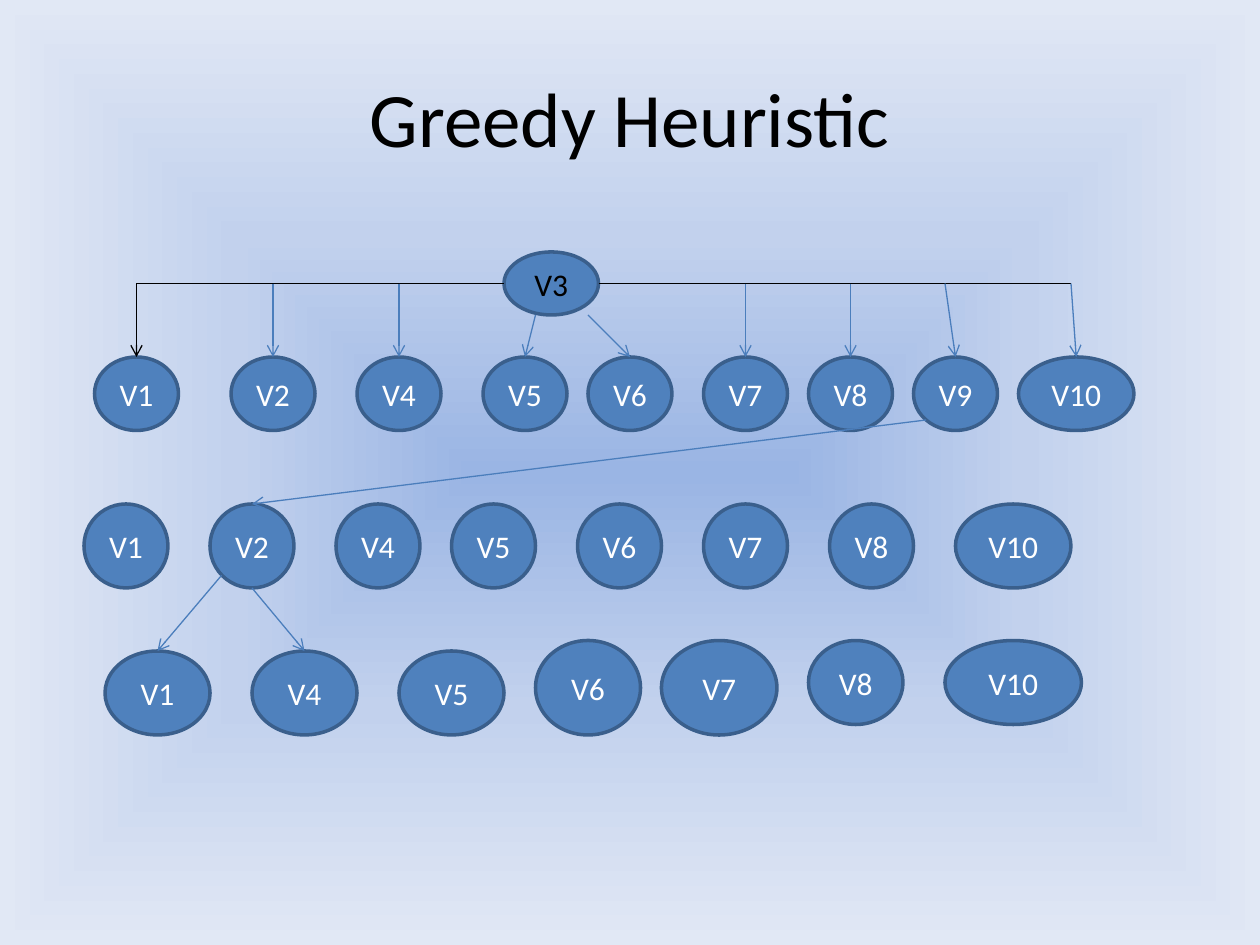
"""Build the Greedy Heuristic slide: three levels of vertices joined by arrows."""
from lxml.etree import SubElement
from pptx import Presentation
from pptx.dml.color import RGBColor
from pptx.enum.shapes import MSO_CONNECTOR, MSO_SHAPE
from pptx.enum.text import MSO_ANCHOR, PP_ALIGN
from pptx.oxml.ns import qn
from pptx.util import Pt

SCALE = 7620
FONT = "Calibri"
BLACK, WHITE = "000000", "FFFFFF"
OVAL_FILL, OVAL_LINE, ARROW_BLUE = "4F81BD", "3A5F8C", "4B7EBC"
BACKGROUND_STOPS = [(0, "9AB5E4"), (50, "C2D1ED"), (100, "E1E8F5")]

TITLE = ("Greedy Heuristic", (60, 36, 1080, 150))
ROOT = ("V3", (480, 240, 90, 60))
BUS_Y = 270
BUS_LINES = [(130, 480), (570, 1020)]

FIRST_LEFTS = {"V1": 90, "V2": 220, "V4": 340, "V5": 460, "V6": 560,
               "V7": 670, "V8": 770, "V9": 870, "V10": 970}
SECOND_LEFTS = {"V1": 80, "V2": 200, "V4": 320, "V5": 430, "V6": 550,
                "V7": 670, "V8": 790, "V10": 910}
THIRD_LEVEL = {
    "V1": (100, 620, 100, 80), "V4": (240, 620, 100, 80),
    "V5": (380, 620, 100, 80), "V6": (510, 610, 100, 90),
    "V7": (630, 610, 110, 90), "V8": (770, 610, 90, 80),
    "V10": (900, 610, 130, 80),
}

ARROWS = [
    (130, BUS_Y, 0, "V1", BLACK),
    (260, BUS_Y, 0, "V2", ARROW_BLUE),
    (380, BUS_Y, 0, "V4", ARROW_BLUE),
    (510, 300, 0, "V5", ARROW_BLUE),
    (560, 300, 0, "V6", ARROW_BLUE),
    (710, BUS_Y, 0, "V7", ARROW_BLUE),
    (810, BUS_Y, 0, "V8", ARROW_BLUE),
    (900, BUS_Y, 0, "V9", ARROW_BLUE),
    (1020, BUS_Y, 0, "V10", ARROW_BLUE),
    (882, 400, 1, "V2", ARROW_BLUE),
    (211, 548, 2, "V1", ARROW_BLUE),
    (240, 560, 2, "V4", ARROW_BLUE),
]


def px(*values):
    return [round(value * SCALE) for value in values]


def color(value):
    return RGBColor.from_string(value)


def even_level(lefts, top, height):
    return {label: (left, top, 110 if label == "V10" else 80, height)
            for label, left in lefts.items()}


def paint_background(page):
    page.background.fill.gradient()
    gradient = next(page.background._cSld.iter(qn("a:gradFill")))
    for child in list(gradient):
        gradient.remove(child)
    stops = SubElement(gradient, qn("a:gsLst"))
    for percent, value in BACKGROUND_STOPS:
        stop = SubElement(stops, qn("a:gs"), pos=str(percent * 1000))
        SubElement(stop, qn("a:srgbClr"), val=value)
    shade = SubElement(gradient, qn("a:path"), path="shape")
    SubElement(shade, qn("a:fillToRect"), l="50000", t="50000", r="50000", b="50000")


def set_text(shape, text, size, text_color):
    frame = shape.text_frame
    frame.text = text
    frame.vertical_anchor = MSO_ANCHOR.MIDDLE
    paragraph = frame.paragraphs[0]
    paragraph.alignment = PP_ALIGN.CENTER
    font = paragraph.runs[0].font
    font.name, font.size = FONT, Pt(size)
    font.color.rgb = color(text_color)


def add_title(page, text, box):
    title = page.shapes.title
    title.left, title.top, title.width, title.height = px(*box)
    set_text(title, text, 44, BLACK)


def add_vertex(page, label, box, text_color=WHITE):
    oval = page.shapes.add_shape(MSO_SHAPE.OVAL, *px(*box))
    oval.shadow.inherit = False
    oval.fill.solid()
    oval.fill.fore_color.rgb = color(OVAL_FILL)
    oval.line.color.rgb = color(OVAL_LINE)
    oval.line.width = Pt(2)
    set_text(oval, label, 18, text_color)
    return oval


def add_line(page, start, end, line_color):
    line = page.shapes.add_connector(MSO_CONNECTOR.STRAIGHT, *px(*start, *end))
    line.line.color.rgb = color(line_color)
    line.line.width = Pt(0.75)
    SubElement(line._element.spPr, qn("a:effectLst"))
    return line


def add_arrow(page, start, target, line_color):
    arrow = add_line(page, start, start, line_color)
    arrow.end_connect(target, 0)
    SubElement(arrow.line._get_or_add_ln(), qn("a:tailEnd"), type="arrow")


def main():
    deck = Presentation()
    deck.slide_width, deck.slide_height = px(1200, 900)
    page = deck.slides.add_slide(deck.slide_layouts[5])
    paint_background(page)
    add_title(page, *TITLE)
    add_vertex(page, *ROOT, text_color=BLACK)

    levels = [even_level(FIRST_LEFTS, 340, 70), even_level(SECOND_LEFTS, 480, 80),
              THIRD_LEVEL]
    vertices = [{label: add_vertex(page, label, box) for label, box in level.items()}
                for level in levels]

    for left, right in BUS_LINES:
        add_line(page, (left, BUS_Y), (right, BUS_Y), BLACK)
    for x, y, level, label, line_color in ARROWS:
        add_arrow(page, (x, y), vertices[level][label], line_color)
    deck.save("out.pptx")


if __name__ == "__main__":
    main()
